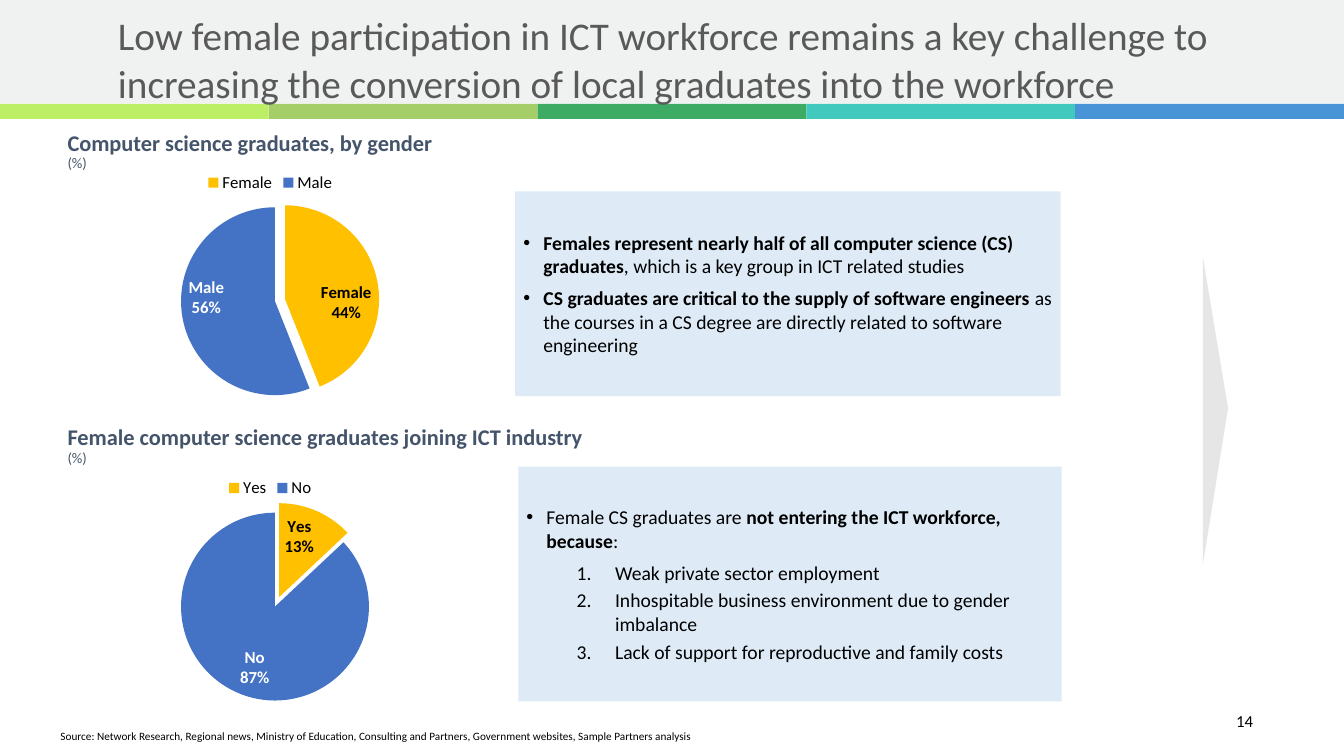
from lxml import etree
from pptx import Presentation
from pptx.chart.data import CategoryChartData
from pptx.dml.color import RGBColor
from pptx.enum.chart import XL_CHART_TYPE as CHART, XL_LABEL_POSITION as LABEL_POS, XL_LEGEND_POSITION as LEGEND_POS
from pptx.enum.shapes import MSO_SHAPE as SHAPE
from pptx.enum.text import MSO_ANCHOR as ANCHOR, MSO_AUTO_SIZE as AUTOSIZE, PP_ALIGN as ALIGN
from pptx.oxml.ns import qn
from pptx.util import Inches, Pt

# Content
TITLE = ("Low female participation in ICT workforce remains a key challenge to "
         "increasing the conversion of local graduates into the workforce")
SOURCE = ("Source: Network Research, Regional news, Ministry of Education, Consulting and Partners, "
          "Government websites, Sample Partners analysis")
PAGE = "14"
STRIPES = ["BCEF66", "A5CE68", "3DAB64", "41C9BD", "4994D7"]
SLICES = [("FFC000", "000000"), ("4472C4", "FFFFFF")]  # fill, label colour
BULLET = dict(bullet="•", left=0.2, hang=0.2, before=6)
NUMBER = dict(bullet="1.", left=0.88, hang=0.38, before=3, level=1)

# A paragraph is a list of (text, bold) runs and its format
SECTIONS = [
    dict(heading="Computer science graduates, by gender", heading_box=(0.67, 1.31, 3.67, 0.4),
         chart_top=1.6, data={"Female": 0.44, "Male": 0.56}, panel=(5.11, 1.9, 5.41, 2.03),
         points=[
             ([("Females represent nearly half of all computer science (CS) graduates", True),
               (", which is a key group in ICT related studies", False)], BULLET),
             ([("CS graduates are critical to the supply of software engineers ", True),
               ("as the courses in a CS degree are directly related to software engineering", False)],
              BULLET)]),
    dict(heading="Female computer science graduates joining ICT industry",
         heading_box=(0.67, 4.23, 5.18, 0.4),
         chart_top=4.63, data={"Yes": 0.13, "No": 0.87}, panel=(5.14, 4.63, 5.39, 2.33),
         points=[
             ([("Female CS graduates are ", False),
               ("not entering the ICT workforce, because", True), (":", False)], BULLET),
             ([("Weak private sector employment", False)], {**NUMBER, "before": 6}),
             ([("Inhospitable business environment due to gender imbalance", False)], NUMBER),
             ([("Lack of support for reproductive and family costs", False)], NUMBER)]),
]


def rgb(value):
    return RGBColor.from_string(value)


def set_font(font, size, color="000000", bold=False):
    font.name, font.size, font.bold = "Calibri", Pt(size), bold
    font.color.rgb = rgb(color)


def add_text(tf, text, size=14, color="000000", bold=False, align=ALIGN.LEFT,
             spacing=None, before=0, left=0, hang=0, bullet=None, level=0):
    """Write one paragraph; text is a string or a list of (text, bold) runs."""
    first = not tf.paragraphs[0].runs
    p = tf.paragraphs[0] if first else tf.add_paragraph()
    p.alignment, p.level = align, level
    p.space_before = Pt(0 if first else before)
    if spacing:
        p.line_spacing = spacing
    pPr = p._p.get_or_add_pPr()
    pPr.set("marL", str(Inches(left)))
    pPr.set("indent", str(-Inches(hang)))
    if bullet == "1.":
        etree.SubElement(pPr, qn("a:buAutoNum"), type="arabicPeriod")
    elif bullet:
        etree.SubElement(pPr, qn("a:buFont"), typeface="Arial")
        etree.SubElement(pPr, qn("a:buChar"), char=bullet)
    for part, is_bold in [(text, bold)] if isinstance(text, str) else text:
        r = p.add_run()
        r.text = part
        set_font(r.font, size, color, is_bold)


def setup_frame(tf, anchor=ANCHOR.TOP, margin=0, wrap=True):
    tf.word_wrap, tf.vertical_anchor, tf.auto_size = wrap, anchor, AUTOSIZE.NONE
    tf.margin_left = tf.margin_right = tf.margin_top = tf.margin_bottom = Inches(margin)
    return tf


def add_box(s, box, **frame):
    return setup_frame(s.shapes.add_textbox(*map(Inches, box)).text_frame, **frame)


def paint(sp, color):
    sp.shadow.inherit = False
    sp.fill.solid()
    sp.fill.fore_color.rgb = rgb(color)
    sp.line.fill.background()
    return sp


def add_rect(s, box, color):
    return paint(s.shapes.add_shape(SHAPE.RECTANGLE, *map(Inches, box)), color)


def show_category_and_value(labels):
    """Put the category name above the value in a label element."""
    labels.find(qn("c:showCatName")).set("val", "1")
    labels.find(qn("c:showPercent")).set("val", "0")
    separator = etree.Element(qn("c:separator"))
    separator.text = "\n"
    labels.find(qn("c:showBubbleSize" if labels.find(qn("c:showBubbleSize")) is not None
                       else "c:showPercent")).addnext(separator)


def add_pie(s, top, data):
    cd = CategoryChartData(number_format="0%")
    cd.categories = list(data)
    cd.add_series("Series 1", list(data.values()))
    box = map(Inches, (1.38, top, 2.6, 2.33))
    chart = s.shapes.add_chart(CHART.PIE, *box, cd).chart
    set_font(chart.font, 12)
    chart.has_title = False
    chart.has_legend = True
    chart.legend.position = LEGEND_POS.TOP
    chart.legend.include_in_layout = False
    set_font(chart.legend.font, 12)

    plot = chart.plots[0]
    plot.vary_by_categories = True
    series = plot.series[0]
    labels = series.data_labels
    labels.show_value = True
    labels.number_format, labels.number_format_is_linked = "0%", False
    labels.position = LABEL_POS.INSIDE_END
    set_font(labels.font, 12, bold=True)
    show_category_and_value(labels._element)
    for i, (fill, label_color) in enumerate(SLICES):
        point = series.points[i]
        point.format.fill.solid()
        point.format.fill.fore_color.rgb = rgb(fill)
        point.format.line.fill.background()
        set_font(point.data_label.font, 12, label_color, True)
        point.data_label.position = LABEL_POS.INSIDE_END
    for label in labels._element.findall(qn("c:dLbl")):
        show_category_and_value(label)

    # Pull out the first slice
    first = series._element.find(qn("c:dPt"))
    explosion = etree.Element(qn("c:explosion"), val="11")
    first.find(qn("c:spPr")).addprevious(explosion)

    # Fixed inner plot area
    area = chart._chartSpace.chart.plotArea
    for old in area.findall(qn("c:layout")):
        area.remove(old)
    layout = etree.Element(qn("c:layout"))
    manual = etree.SubElement(layout, qn("c:manualLayout"))
    for tag, val in [("layoutTarget", "inner"), ("xMode", "edge"), ("yMode", "edge"),
                     ("x", "0.146"), ("y", "0.196"), ("w", "0.745"), ("h", "0.8")]:
        etree.SubElement(manual, qn("c:" + tag), val=val)
    area.insert(0, layout)


def main():
    prs = Presentation()
    prs.slide_width, prs.slide_height = Inches(13.33), Inches(7.5)
    s = prs.slides.add_slide(prs.slide_layouts[5])

    # Header band and stripes
    add_rect(s, (0, 0, 13.33, 1.03), "F0F2F1")
    width = 13.33 / len(STRIPES)
    for i, color in enumerate(STRIPES):
        add_rect(s, (i * width, 1.03, width, 0.15), color)

    # Title, brought in front of the band
    title = s.shapes.title
    title.left, title.top, title.width, title.height = map(Inches, (0.67, 0.11, 12, 0.95))
    add_text(setup_frame(title.text_frame), TITLE, size=28, color="595959", left=0.5, spacing=Pt(34))
    title.element.getparent().append(title.element)

    # Heading, pie and comment panel of each section
    for section in SECTIONS:
        tf = add_box(s, section["heading_box"], wrap=False)
        add_text(tf, section["heading"], size=16, color="44546A", bold=True, spacing=0.9)
        add_text(tf, "(%)", size=10.5, color="44546A", spacing=0.9)
        add_pie(s, section["chart_top"], section["data"])
        panel = add_rect(s, section["panel"], "DEEBF7")
        tf = setup_frame(panel.text_frame, ANCHOR.MIDDLE, 0.08)
        for runs, style in section["points"]:
            add_text(tf, runs, **style)

    # Grey pointer on the right
    pointer = s.shapes.build_freeform(Inches(11.93), Inches(2.55))
    pointer.add_line_segments([(Inches(11.93), Inches(5.6)), (Inches(12.18), Inches(4.05))])
    paint(pointer.convert_to_shape(), "E7E6E6")

    # Footer
    add_text(add_box(s, (0.6, 7.24, 11.57, 0.13), anchor=ANCHOR.BOTTOM), SOURCE, size=8)
    add_text(add_box(s, (12.02, 6.95, 0.65, 0.4), anchor=ANCHOR.MIDDLE), PAGE, size=12,
             align=ALIGN.CENTER)
    prs.save("out.pptx")


if __name__ == "__main__":
    main()
